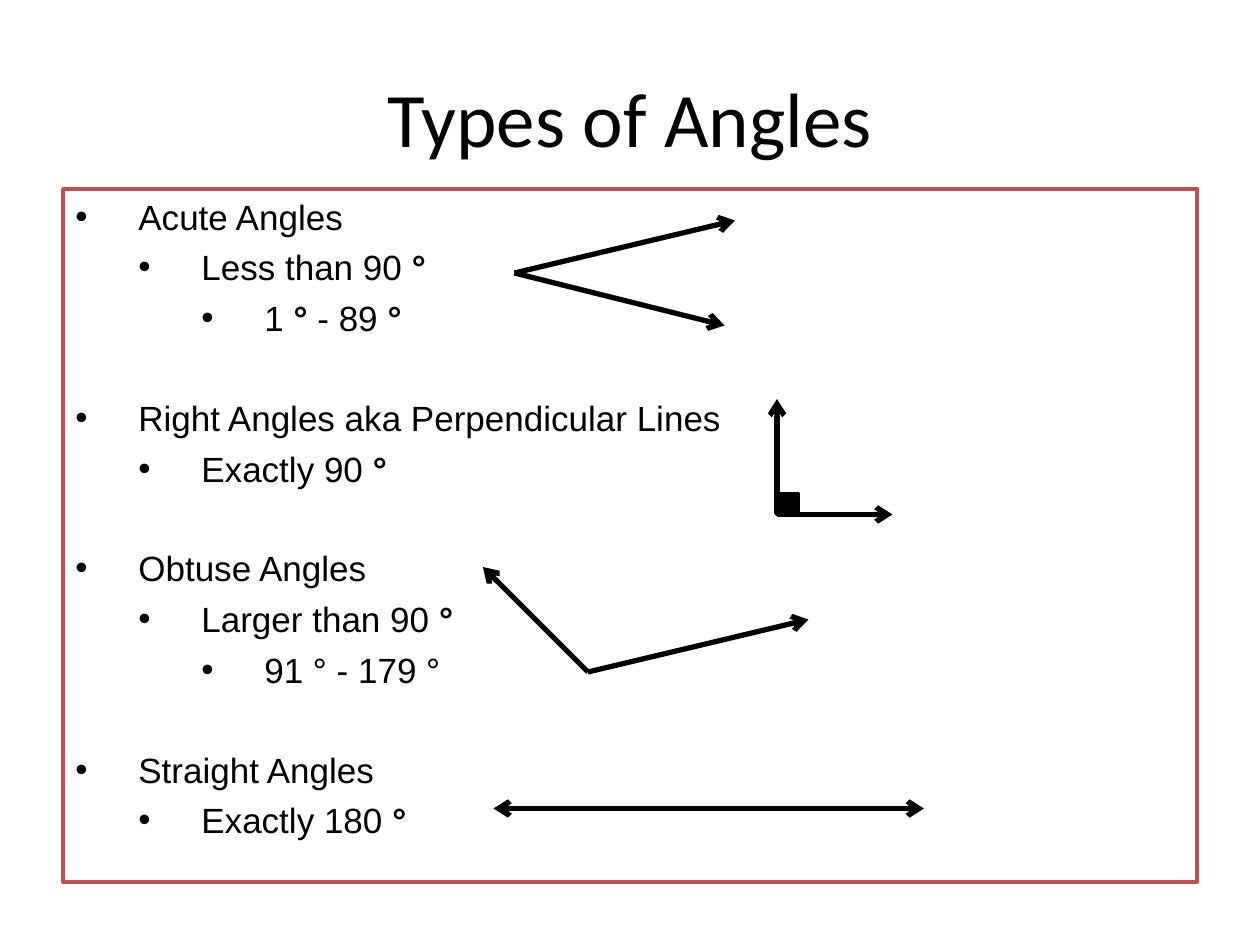
"""Build the Types of Angles slide."""
import lxml.etree
import pptx
import pptx.dml.color
import pptx.enum.shapes
import pptx.enum.text
import pptx.oxml.ns
import pptx.util

Pt = pptx.util.Pt
qn = pptx.oxml.ns.qn
SHAPES = pptx.enum.shapes.MSO_SHAPE
ALIGN = pptx.enum.text.PP_ALIGN
ANCHOR = pptx.enum.text.MSO_ANCHOR

INDENT = 36
SPACE = {"first": 2, "line": 5, "group": 33}
ITEMS = [
    (0, "first", "Acute Angles"),
    (1, "line", "Less than 90 *°"),
    (2, "line", "1 *°* - 89 *°"),
    (0, "group", "Right Angles aka Perpendicular Lines"),
    (1, "line", "Exactly 90* °"),
    (0, "group", "Obtuse Angles"),
    (1, "line", "Larger than 90* °"),
    (2, "line", "91 ° - 179 °"),
    (0, "group", "Straight Angles"),
    (1, "line", "Exactly 180* °"),
]
ACUTE, RIGHT, OBTUSE = (294, 156), (444, 294), (336, 384)
RAYS = [
    (ACUTE, (420, 126)),
    (ACUTE, (414, 186)),
    (RIGHT, (510, 294)),
    (RIGHT, (444, 228)),
    (OBTUSE, (462, 354)),
    (OBTUSE, (276, 324)),
]


def color(value):
    return pptx.dml.color.RGBColor.from_string(value)


def apply(obj, values):
    for name, value in values.items():
        setattr(obj, name, value)


class Deck:
    def __init__(self, prs):
        self.ink = "000000"
        self.heading = {"name": "Calibri", "size": Pt(44)}
        self.body = {"name": "Arial", "size": Pt(20)}
        self.s = prs.slides.add_slide(prs.slide_layouts[6])

    def run(self, p, text, font):
        r = p.add_run()
        r.text = text
        apply(r.font, font)
        r.font.color.rgb = color(self.ink)

    def title(self, text, *box):
        sp = self.s.shapes.add_textbox(*map(Pt, box))
        tf = sp.text_frame
        apply(tf, {"word_wrap": True, "vertical_anchor": ANCHOR.MIDDLE})
        p = tf.paragraphs[0]
        p.alignment = ALIGN.CENTER
        self.run(p, text, self.heading)

    def rect(self, fill, line, *box):
        sp = self.s.shapes.add_shape(SHAPES.RECTANGLE, *map(Pt, box))
        sp.shadow.inherit = False
        sp.fill.solid()
        sp.fill.fore_color.rgb = color(fill)
        sp.line.color.rgb = color(line)
        sp.line.width = Pt(2)
        return sp

    def bullets(self, sp, items):
        tf = sp.text_frame
        apply(tf, {"word_wrap": True, "vertical_anchor": ANCHOR.TOP})
        for i, (level, gap, text) in enumerate(items):
            p = tf.add_paragraph() if i else tf.paragraphs[0]
            apply(p, {"level": level, "alignment": ALIGN.LEFT, "space_before": Pt(SPACE[gap])})
            pPr = p._p.get_or_add_pPr()
            pPr.set("marL", str(Pt(INDENT * (level + 1))))
            pPr.set("indent", str(Pt(-INDENT)))
            lxml.etree.SubElement(pPr, qn("a:buFont")).set("typeface", "Arial")
            lxml.etree.SubElement(pPr, qn("a:buChar")).set("char", "•")
            for j, part in enumerate(text.split("*")):
                if part:
                    self.run(p, part, {**self.body, "bold": j % 2 == 1})

    def arrow(self, start, end, ends=("tailEnd",)):
        kind = pptx.enum.shapes.MSO_CONNECTOR.STRAIGHT
        sp = self.s.shapes.add_connector(kind, *map(Pt, start + end))
        sp.line.color.rgb = color(self.ink)
        sp.line.width = Pt(3)
        spPr = sp._element.spPr
        for name in ends:
            lxml.etree.SubElement(spPr.find(qn("a:ln")), qn("a:" + name)).set("type", "arrow")
        lxml.etree.SubElement(spPr, qn("a:effectLst"))


def main():
    prs = pptx.Presentation()
    apply(prs, {"slide_width": Pt(720), "slide_height": Pt(540)})
    deck = Deck(prs)
    deck.title("Types of Angles", 36, 21.6, 648, 90)
    deck.bullets(deck.rect("FFFFFF", "C0504D", 36, 108, 648, 396), ITEMS)
    deck.rect(deck.ink, deck.ink, 444, 282, 12, 12)
    for start, end in RAYS:
        deck.arrow(start, end)
    deck.arrow((282, 462), (528, 462), ("headEnd", "tailEnd"))
    prs.save("out.pptx")


if __name__ == "__main__":
    main()
